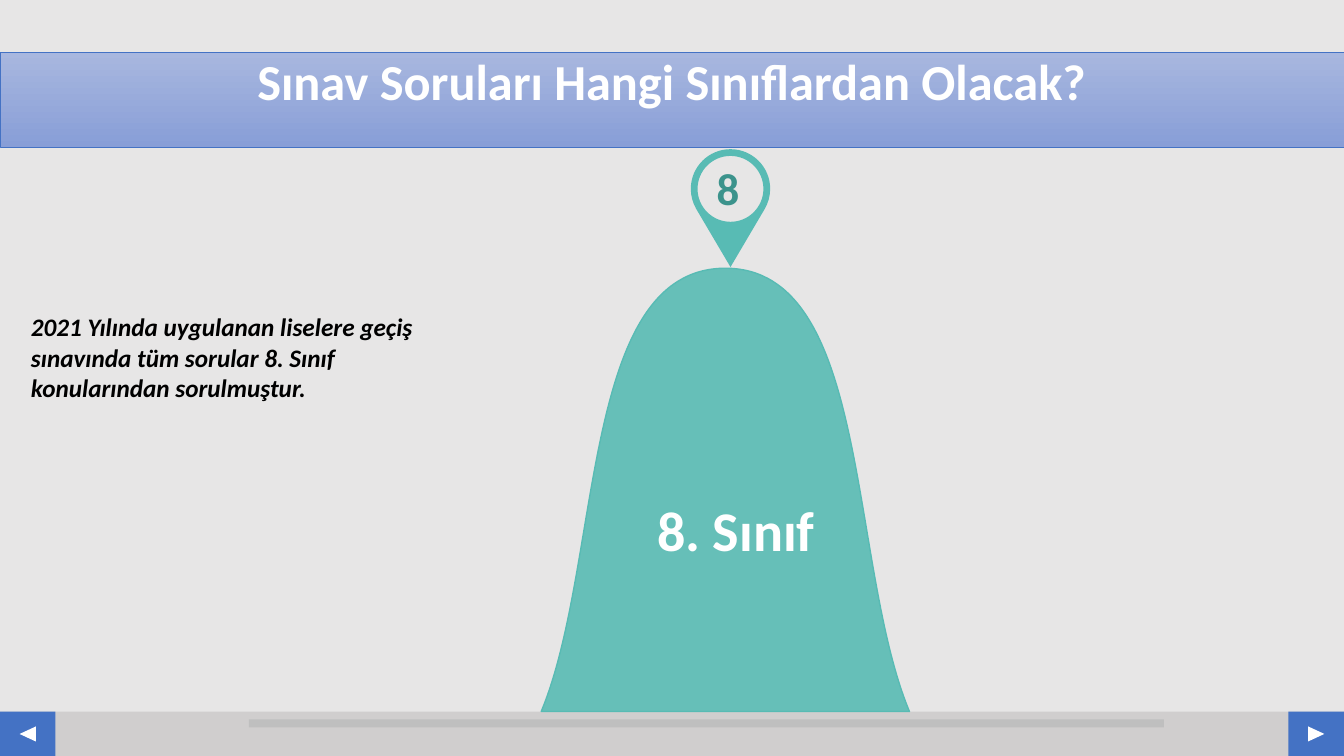
from dataclasses import dataclass
from itertools import islice, pairwise
from math import cos, radians, sin, tan

from lxml.etree import SubElement
from pptx import Presentation
from pptx.dml.color import RGBColor as Rgb
from pptx.enum.shapes import MSO_SHAPE as Kind
from pptx.enum.text import MSO_ANCHOR as Anchor
from pptx.enum.text import MSO_AUTO_SIZE as Auto
from pptx.enum.text import PP_ALIGN as Align
from pptx.oxml.ns import qn
from pptx.util import Cm, Pt


@dataclass(frozen=True)
class Theme:
    font: str = "Calibri"
    back: str = "E7E6E6"
    bar: str = "D0CECE"
    track: str = "BFBFBF"
    blue: str = "4472C4"
    light: str = "A8B7DF"
    deep: str = "889ED7"
    teal: str = "58BBB4"
    dark: str = "3C938C"
    white: str = "FFFFFF"
    black: str = "000000"
    title: int = 36
    label: int = 40
    digit: int = 32
    note: int = 18


THEME = Theme()
WIDE, HIGH = 33.87, 19.05
BASE = 17.93


def color(code):
    return Rgb.from_string(code)


def write(frame, text, size, ink, align=Align.LEFT, bold=True, italic=False,
          wrap=True, auto=Auto.SHAPE_TO_FIT_TEXT, space=None):
    frame.word_wrap = wrap
    frame.auto_size = auto
    frame.vertical_anchor = Anchor.TOP
    para = frame.paragraphs[0]
    para.alignment = align
    para.line_spacing = space
    run = para.add_run()
    run.text = text
    font = run.font
    font.name, font.size = THEME.font, Pt(size)
    font.bold, font.italic = bold, italic
    font.color.rgb = color(ink)


def add_text(slide, box, text, **style):
    shape = slide.shapes.add_textbox(*map(Cm, box))
    write(shape.text_frame, text, **style)


def paint(shape, fill, line=None, alpha=None):
    shape.shadow.inherit = False
    shape.fill.solid()
    shape.fill.fore_color.rgb = color(fill)
    if alpha:
        tint = shape.fill._xPr.find(qn("a:solidFill"))[0]
        SubElement(tint, qn("a:alpha")).set("val", str(alpha * 1000))
    if line:
        shape.line.color.rgb = color(line)
        shape.line.width = Pt(1)
    else:
        shape.line.fill.background()


def add_block(slide, kind, box, fill, turn=0):
    shape = slide.shapes.add_shape(kind, *map(Cm, box))
    shape.rotation = turn
    paint(shape, fill)


def add_form(slide, loops, fill, **style):
    form = None
    for start, parts in loops:
        start = tuple(map(Cm, start))
        if form:
            form.move_to(*start)
        else:
            form = slide.shapes.build_freeform(*start)
        dots = [tuple(map(Cm, dot)) for part in parts for dot in part]
        form.add_line_segments(dots, close=True)
    shape = form.convert_to_shape()
    lines = iter(list(shape._element.iter(qn("a:lnTo"))))
    for part in (part for loop in loops for part in loop[1]):
        first, *rest = islice(lines, len(part))
        if rest:
            first.tag = qn("a:cubicBezTo")
        for item in rest:
            first.append(item[0])
            item.getparent().remove(item)
    paint(shape, fill, **style)


def arc(x, y, radius, angles):
    def dot(angle, pull=0):
        c, s = cos(radians(angle)), sin(radians(angle))
        return x + radius * (c - pull * s), y + radius * (s + pull * c)

    parts = []
    for a, b in pairwise(angles):
        pull = 4 / 3 * tan(radians(b - a) / 4)
        parts.append([dot(a, pull), dot(b, -pull), dot(b)])
    return dot(angles[0]), parts


def add_title(slide, text):
    title = slide.shapes.title
    title.left, title.top, title.width, title.height = map(
        Cm, (0, 1.32, WIDE, 2.39))
    title.fill.gradient()
    title.fill.gradient_angle = 270
    tints = (THEME.light, THEME.deep)
    for place, (stop, tint) in enumerate(zip(title.fill.gradient_stops, tints)):
        stop.color.rgb = color(tint)
        stop.position = place
    title.line.color.rgb = color(THEME.blue)
    title.line.width = Pt(0.5)
    write(title.text_frame, text, size=THEME.title, ink=THEME.white,
          align=Align.CENTER, auto=Auto.NONE, space=0.9)


def add_footer(slide):
    tall, side = HIGH - BASE, 1.4
    add_block(slide, Kind.RECTANGLE, (0, BASE, WIDE, tall), THEME.bar)
    for left, mark, turn in ((0, 0.51, 270), (WIDE - side, 0.51, 90)):
        add_block(slide, Kind.RECTANGLE, (left, BASE, side, tall), THEME.blue)
        add_block(slide, Kind.ISOSCELES_TRIANGLE,
                  (left + mark, 18.29, 0.38, 0.41), THEME.white, turn)
    add_block(slide, Kind.RECTANGLE, (6.27, 18.13, 23.06, 0.2), THEME.track)


def add_bell(slide):
    mid = 18.28
    left = [(13.64, BASE), (15.19, 14.2), (14.6, 6.76), (mid, 6.76)]
    right = [(2 * mid - x, y) for x, y in reversed(left[:-1])]
    loop = left[0], [left[1:], right, [left[0]]]
    add_form(slide, [loop], THEME.teal, line=THEME.teal, alpha=90)


def add_pin(slide):
    x, y = 18.41, 4.76
    start, parts = arc(x, y, 1, (150, 180, 270, 360, 390))
    drop = start, parts + [[(x, 6.73)]]
    hole = arc(x, y, 0.83, (90, 0, -90, -180, -270))
    add_form(slide, [drop, hole], THEME.teal)


def main():
    deck = Presentation()
    deck.slide_width, deck.slide_height = Cm(WIDE), Cm(HIGH)
    slide = deck.slides.add_slide(deck.slide_layouts[5])
    slide.background.fill.solid()
    slide.background.fill.fore_color.rgb = color(THEME.back)
    add_title(slide, "Sınav Soruları Hangi Sınıflardan Olacak?")
    add_footer(slide)
    add_bell(slide)
    add_pin(slide)
    add_text(slide, (17.81, 3.93, 1.09, 1.63), "8",
             size=THEME.digit, ink=THEME.dark, wrap=False)
    add_text(slide, (16.31, 12.37, 5.16, 1.96), "8. Sınıf",
             size=THEME.label, ink=THEME.white)
    add_text(slide, (0.53, 7.73, 10.21, 2.57),
             "2021 Yılında uygulanan liselere geçiş sınavında tüm sorular "
             "8. Sınıf konularından sorulmuştur.",
             size=THEME.note, ink=THEME.black, italic=True)
    deck.save("out.pptx")


if __name__ == "__main__":
    main()
